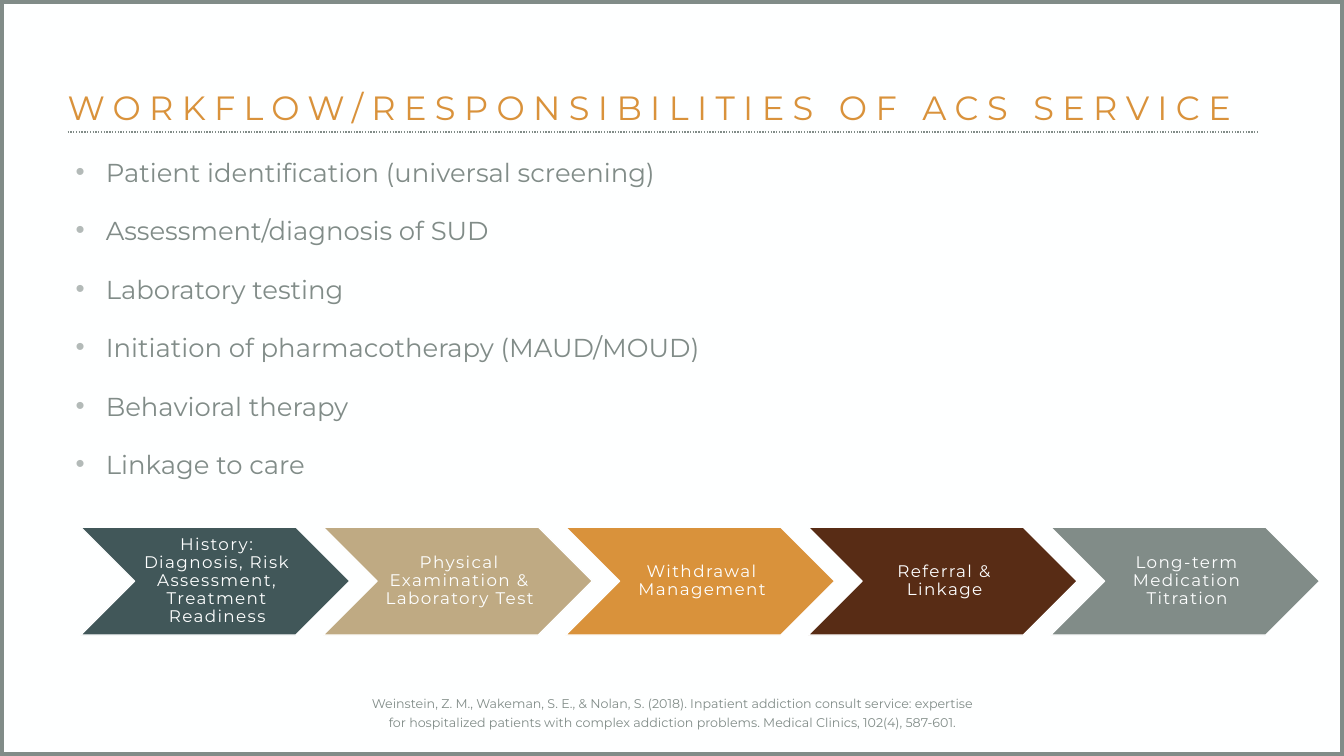
from lxml.etree import SubElement
from pptx import Presentation
from pptx.dml.color import RGBColor
from pptx.enum.dml import MSO_LINE
from pptx.enum.shapes import MSO_CONNECTOR, MSO_SHAPE
from pptx.enum.text import MSO_ANCHOR, PP_ALIGN
from pptx.oxml.ns import qn
from pptx.util import Inches, Pt

FONT = "Montserrat"
WHITE, GRAY, ORANGE, BULLET_GRAY = "FEFFFF", "818C88", "D9923B", "B3BAB8"
TITLE = "WORKFLOW/RESPONSIBILITIES OF ACS SERVICE"
RESPONSIBILITIES = [
    "Patient identification (universal screening)",
    "Assessment/diagnosis of SUD",
    "Laboratory testing",
    "Initiation of pharmacotherapy (MAUD/MOUD)",
    "Behavioral therapy",
    "Linkage to care",
]
STEPS = [
    ("History: Diagnosis, Risk Assessment, Treatment Readiness", "415759", 5),
    ("Physical Examination & Laboratory Test", "BFAA83", 3),
    ("Withdrawal Management", ORANGE, 2),
    ("Referral & Linkage", "582C15", 2),
    ("Long-term Medication Titration", GRAY, 3),
]
CITATION = (
    "Weinstein, Z. M., Wakeman, S. E., & Nolan, S. (2018). Inpatient addiction "
    "consult service: expertise for hospitalized patients with complex addiction "
    "problems. Medical Clinics, 102(4), 587-601."
)


def color(value):
    """Turn a hex string into a colour."""
    return RGBColor.from_string(value)


def add_border(slide, width, height):
    """Frame the whole slide with an unfilled rectangle."""
    border = slide.shapes.add_shape(MSO_SHAPE.RECTANGLE, 0, 0, width, height)
    border.shadow.inherit = False
    border.fill.background()
    border.line.color.rgb = color(GRAY)
    border.line.width = Pt(6)


def add_title_rule(slide):
    """Draw the dotted line under the title."""
    rule = slide.shapes.add_connector(
        MSO_CONNECTOR.STRAIGHT, Inches(0.67), Inches(1.31), Inches(12.47), Inches(1.31))
    rule.line.color.rgb = color(GRAY)
    rule.line.width = Pt(1)
    rule.line.dash_style = MSO_LINE.ROUND_DOT
    SubElement(rule._element.spPr, qn("a:effectLst"))


def add_text(slide, box, lines, size, text_color, anchor=MSO_ANCHOR.TOP, align=PP_ALIGN.LEFT,
             line_spacing=0.9, space_before=0, letter_spacing=0, inset=0):
    """Add a wrapped text box with one paragraph per line and return its paragraphs."""
    frame = slide.shapes.add_textbox(*map(Inches, box)).text_frame
    frame.word_wrap = True
    frame.vertical_anchor = anchor
    frame.margin_left = frame.margin_right = Inches(inset)
    frame.margin_top = frame.margin_bottom = Inches(inset)
    frame.text = "\n".join(lines)
    for paragraph in frame.paragraphs:
        paragraph.alignment = align
        paragraph.line_spacing = line_spacing
        paragraph.space_before = Pt(space_before)
        paragraph.font.name = FONT
        paragraph.font.size = Pt(size)
        paragraph.font.color.rgb = color(text_color)
        if letter_spacing:
            for run in paragraph.runs:
                run.font._element.set("spc", str(letter_spacing * 100))
    return frame.paragraphs


def add_bullet(paragraph):
    """Give a paragraph a hanging round bullet."""
    properties = paragraph._element.get_or_add_pPr()
    properties.set("marL", str(Inches(0.38)))
    properties.set("indent", str(Inches(-0.3)))
    default_font = properties.find(qn("a:defRPr"))
    bullet_color = SubElement(properties, qn("a:buClr"))
    SubElement(bullet_color, qn("a:srgbClr"), val=BULLET_GRAY)
    bullet_font = SubElement(properties, qn("a:buFont"), typeface="Arial")
    bullet = SubElement(properties, qn("a:buChar"), char="•")
    for element in (bullet_color, bullet_font, bullet):
        default_font.addprevious(element)


def add_step(slide, left, label, fill, line_count):
    """Add one chevron of the workflow with its centred label."""
    top, height = 5.23, 1.07
    chevron = slide.shapes.add_shape(
        MSO_SHAPE.CHEVRON, Inches(left), Inches(top), Inches(2.67), Inches(height))
    chevron.shadow.inherit = False
    chevron.fill.solid()
    chevron.fill.fore_color.rgb = color(fill)
    chevron.line.color.rgb = color(WHITE)
    chevron.line.width = Pt(1)
    label_height = 0.04 + 0.18 * line_count
    box = (left + 0.57, top + (height - label_height) / 2, 1.57, label_height)
    add_text(slide, box, [label], 12, WHITE, MSO_ANCHOR.MIDDLE, PP_ALIGN.CENTER,
             space_before=5, letter_spacing=1, inset=0.02)


def main():
    """Build the workflow slide and save it."""
    presentation = Presentation()
    presentation.slide_width = Inches(13.33)
    presentation.slide_height = Inches(7.5)
    slide = presentation.slides.add_slide(presentation.slide_layouts[6])
    slide.background.fill.solid()
    slide.background.fill.fore_color.rgb = color(WHITE)

    add_border(slide, presentation.slide_width, presentation.slide_height)
    add_title_rule(slide)
    add_text(slide, (0.67, 0.56, 12, 0.71), [TITLE], 24, ORANGE, MSO_ANCHOR.BOTTOM,
             letter_spacing=6)
    for paragraph in add_text(slide, (0.67, 1.61, 8.23, 3.26), RESPONSIBILITIES, 18.5, GRAY,
                              line_spacing=0.8, space_before=24):
        add_bullet(paragraph)

    first_left, last_left = 0.8, 10.42
    pitch = (last_left - first_left) / (len(STEPS) - 1)
    for index, (label, fill, line_count) in enumerate(STEPS):
        add_step(slide, first_left + index * pitch, label, fill, line_count)

    add_text(slide, (3.62, 6.39, 6.09, 0.85), [CITATION], 9, GRAY, MSO_ANCHOR.BOTTOM,
             PP_ALIGN.CENTER, line_spacing=1.25, space_before=10)
    presentation.save("out.pptx")


if __name__ == "__main__":
    main()
